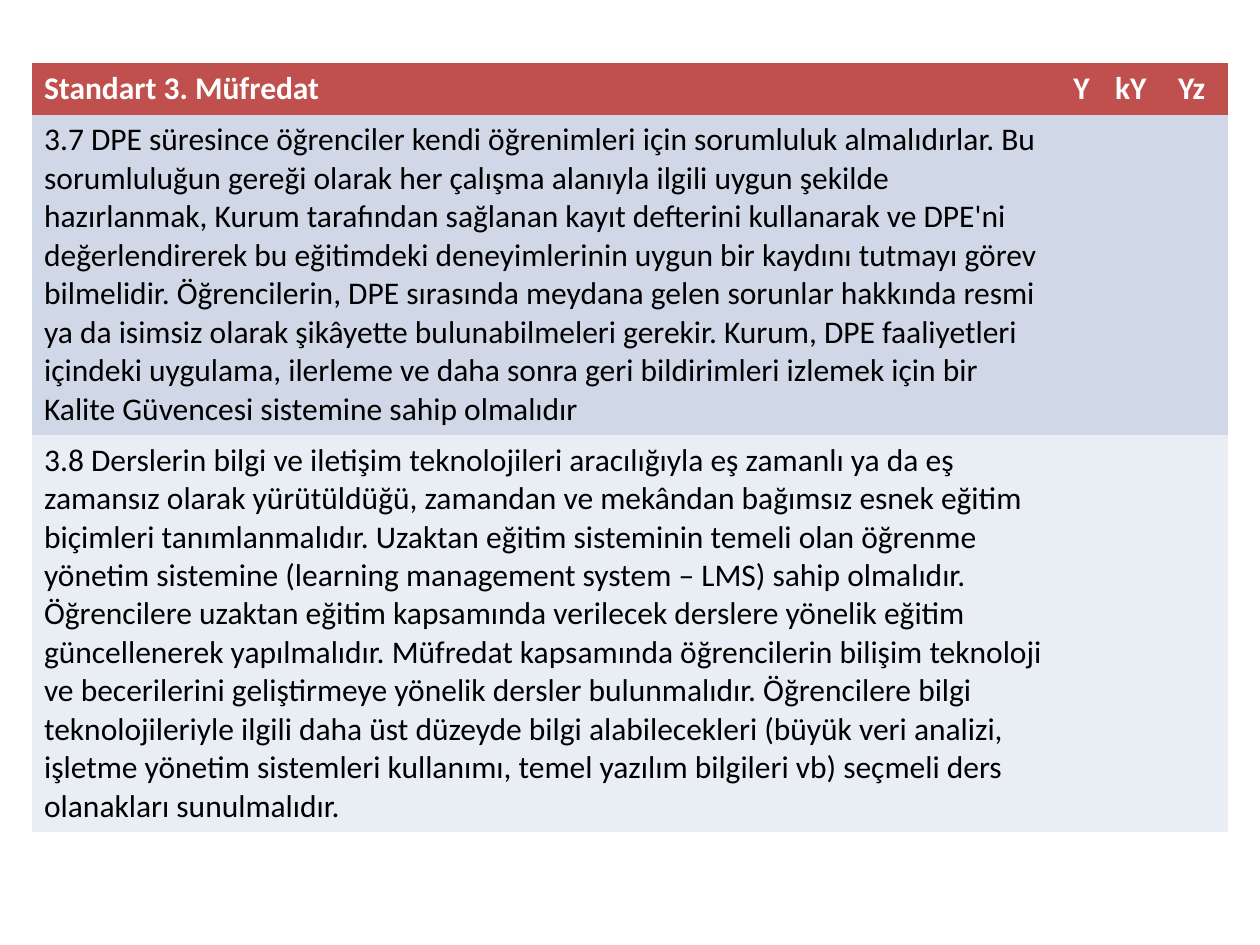
from dataclasses import dataclass

from pptx import Presentation
from pptx.dml.color import RGBColor
from pptx.util import Inches, Pt

WHITE = RGBColor(0xFF, 0xFF, 0xFF)
BLACK = RGBColor(0x00, 0x00, 0x00)
RED = RGBColor(0xC0, 0x50, 0x4D)
BAND_DARK = RGBColor(0xD0, 0xD8, 0xE8)
BAND_LIGHT = RGBColor(0xE9, 0xED, 0xF4)
FONT = "Calibri"
FONT_SIZE = Pt(18)
NO_STYLE = "{2D5ABB26-0587-4C30-8999-92F81FD0307C}"
COL_WIDTHS = (8.17, 0.33, 0.5, 0.5)
ROW_HEIGHT = Inches(0.41)


@dataclass(frozen=True)
class Row:
    texts: tuple[str, ...]
    fill: RGBColor
    color: RGBColor = BLACK
    bold: bool = False


STANDARD_3_7 = (
    "3.7 DPE süresince öğrenciler kendi öğrenimleri için sorumluluk almalıdırlar. "
    "Bu sorumluluğun gereği olarak her çalışma alanıyla ilgili uygun şekilde "
    "hazırlanmak, Kurum tarafından sağlanan kayıt defterini kullanarak ve DPE'ni "
    "değerlendirerek bu eğitimdeki deneyimlerinin uygun bir kaydını tutmayı görev "
    "bilmelidir. Öğrencilerin, DPE sırasında meydana gelen sorunlar hakkında resmi "
    "ya da isimsiz olarak şikâyette bulunabilmeleri gerekir. Kurum, DPE faaliyetleri "
    "içindeki uygulama, ilerleme ve daha sonra geri bildirimleri izlemek için bir "
    "Kalite Güvencesi sistemine sahip olmalıdır"
)
STANDARD_3_8 = (
    "3.8 Derslerin bilgi ve iletişim teknolojileri aracılığıyla eş zamanlı ya da eş "
    "zamansız olarak yürütüldüğü, zamandan ve mekândan bağımsız esnek eğitim "
    "biçimleri tanımlanmalıdır. Uzaktan eğitim sisteminin temeli olan öğrenme "
    "yönetim sistemine (learning management system – LMS) sahip olmalıdır.\n"
    "Öğrencilere uzaktan eğitim kapsamında verilecek derslere yönelik eğitim "
    "güncellenerek yapılmalıdır. Müfredat kapsamında öğrencilerin bilişim teknoloji "
    "ve becerilerini geliştirmeye yönelik dersler bulunmalıdır. Öğrencilere bilgi "
    "teknolojileriyle ilgili daha üst düzeyde bilgi alabilecekleri (büyük veri "
    "analizi, işletme yönetim sistemleri kullanımı, temel yazılım bilgileri vb) "
    "seçmeli ders olanakları sunulmalıdır."
)
ROWS = (
    Row(("Standart 3. Müfredat", "Y", "kY", "Yz"), RED, WHITE, True),
    Row((STANDARD_3_7, "", "", ""), BAND_DARK),
    Row((STANDARD_3_8, "", "", ""), BAND_LIGHT),
)


def fill_cell(cell, text: str, row: Row) -> None:
    cell.fill.solid()
    cell.fill.fore_color.rgb = row.fill
    p = cell.text_frame.paragraphs[0]
    p.font.size = FONT_SIZE
    if not text:
        return
    for i, line in enumerate(text.split("\n")):
        if i:
            p.add_line_break()
        r = p.add_run()
        r.text = line
        r.font.name = FONT
        r.font.size = FONT_SIZE
        r.font.bold = row.bold
        r.font.color.rgb = row.color


def add_standards_table(s, rows: tuple[Row, ...]) -> None:
    frame = s.shapes.add_table(
        len(rows), len(COL_WIDTHS), Inches(0.25), Inches(0.5), Inches(9.5), Inches(6.01)
    )
    table = frame.table
    table._tbl.tblPr.find("{*}tableStyleId").text = NO_STYLE
    for column, width in zip(table.columns, COL_WIDTHS):
        column.width = Inches(width)
    for table_row, row in zip(table.rows, rows):
        table_row.height = ROW_HEIGHT
        for cell, text in zip(table_row.cells, row.texts):
            fill_cell(cell, text, row)
    frame.height = Inches(6.01)


def main() -> None:
    prs = Presentation()
    prs.slide_width, prs.slide_height = Inches(10), Inches(7.5)
    s = prs.slides.add_slide(prs.slide_layouts[6])
    add_standards_table(s, ROWS)
    prs.save("out.pptx")


if __name__ == "__main__":
    main()
